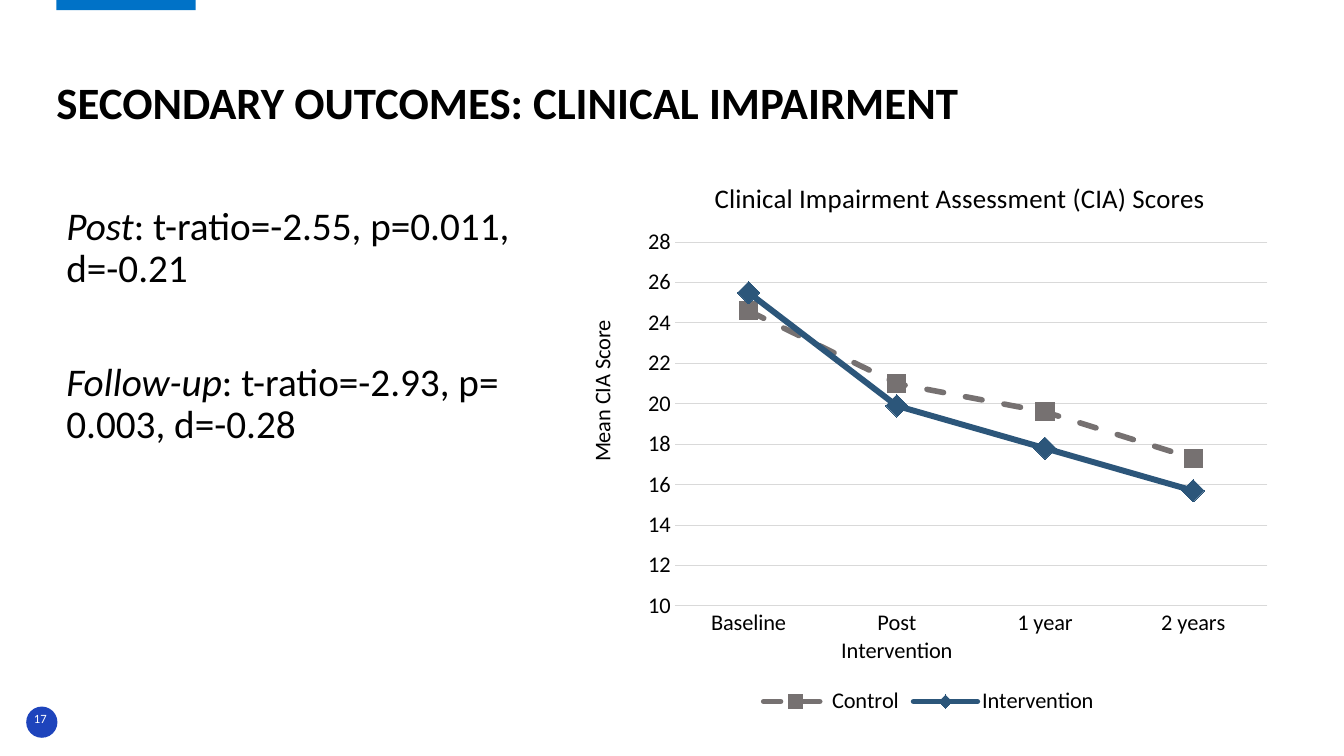
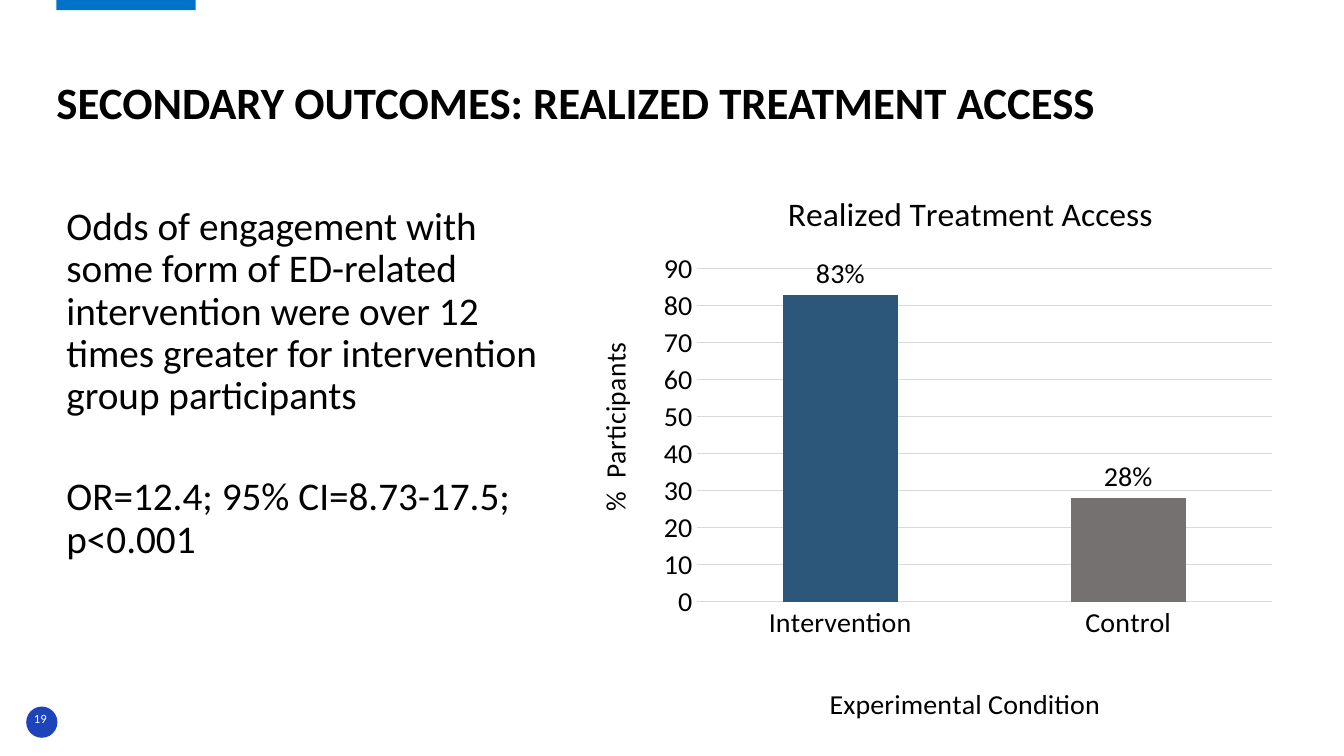
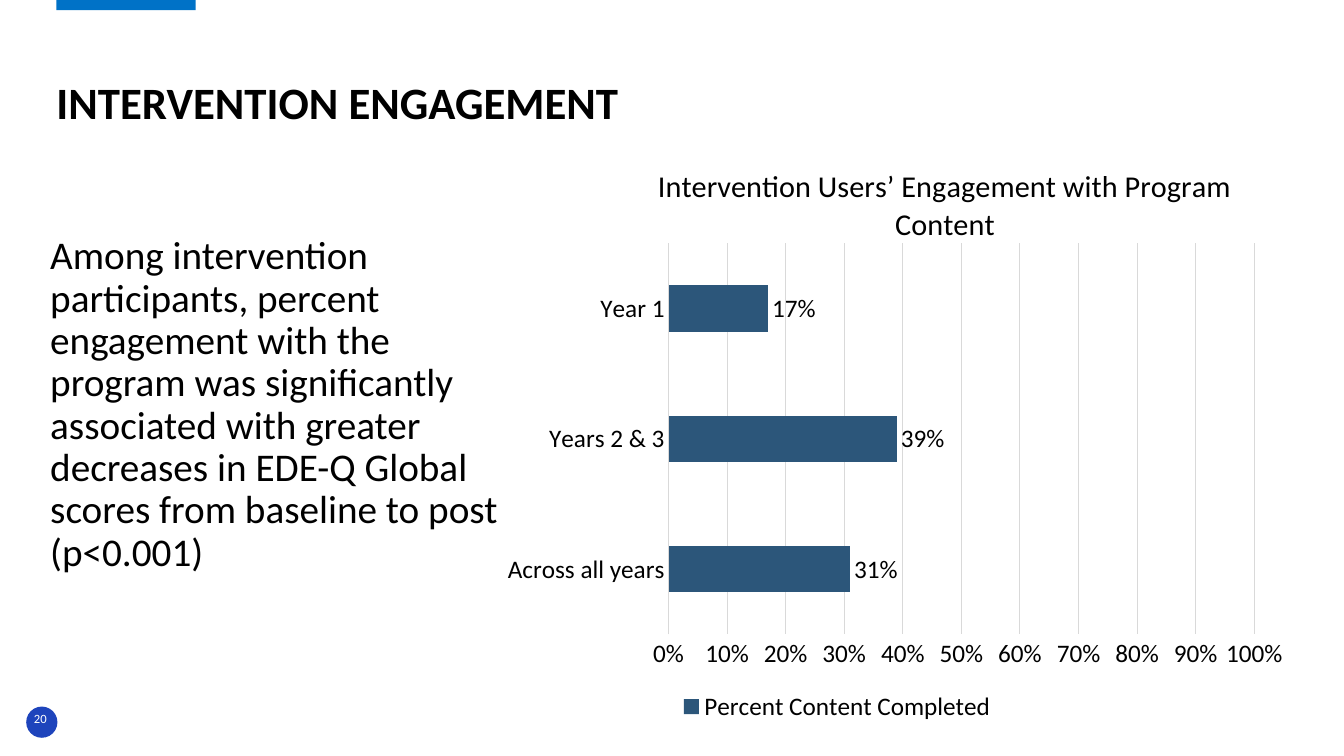
from dataclasses import dataclass

from lxml.etree import SubElement
from pptx import Presentation
from pptx.chart.data import CategoryChartData
from pptx.dml.color import RGBColor
from pptx.enum.chart import (XL_CHART_TYPE, XL_LABEL_POSITION,
                             XL_LEGEND_POSITION, XL_MARKER_STYLE,
                             XL_TICK_MARK)
from pptx.enum.dml import MSO_LINE
from pptx.enum.shapes import MSO_SHAPE
from pptx.enum.text import MSO_ANCHOR, PP_ALIGN
from pptx.oxml.ns import qn
from pptx.util import Inches, Pt

FONT = "Calibri"
BLACK = "000000"
WHITE = "FFFFFF"
BAND = "0072C7"
BADGE = "1E44BC"
NAVY = "2C567A"
GRAY = "767171"
GRID = "D9D9D9"

Box = tuple[float, float, float, float]
Point = tuple[float, float]


@dataclass
class Run:
    text: str
    italic: bool = False


@dataclass
class Series:
    name: str
    values: list[float]
    color: str


@dataclass
class Label:
    text: str
    spot: Point


@dataclass
class Graph:
    kind: XL_CHART_TYPE
    box: Box
    plot: Box
    size: int
    title: Label
    cats: list[str]
    series: list[Series]
    low: float
    high: float
    step: float
    style: str = "General"
    gap: int = 150
    x_name: Label | None = None
    y_name: Label | None = None
    legend: bool = False
    key: Box | None = None


@dataclass
class Page:
    number: str
    title: str
    box: Box
    body: list[list[Run]]
    graph: Graph
    space: int = 0


def color(code: str) -> RGBColor:
    return RGBColor.from_string(code)


def style(font, size: float, code: str = BLACK, bold: bool = False) -> None:
    font.name = FONT
    font.size = Pt(size)
    font.bold = bold
    font.color.rgb = color(code)


def inch(box: Box) -> list[int]:
    return [Inches(side) for side in box]


def add_fill(slide, kind: MSO_SHAPE, box: Box, code: str) -> None:
    shape = slide.shapes.add_shape(kind, *inch(box))
    shape.shadow.inherit = False
    shape.fill.solid()
    shape.fill.fore_color.rgb = color(code)
    shape.line.fill.background()


def add_frame(slide, box: Box, anchor: MSO_ANCHOR, inset: bool = False):
    frame = slide.shapes.add_textbox(*inch(box)).text_frame
    frame.word_wrap = True
    frame.vertical_anchor = anchor
    if not inset:
        frame.margin_left = frame.margin_right = 0
        frame.margin_top = frame.margin_bottom = 0
    return frame


def add_line(slide, box: Box, anchor: MSO_ANCHOR, text: str, size: int,
             code: str, bold: bool, align: PP_ALIGN) -> None:
    frame = add_frame(slide, box, anchor)
    frame.text = text
    part = frame.paragraphs[0]
    part.alignment = align
    part.line_spacing = 0.9
    style(part.runs[0].font, size, code, bold)


def add_body(slide, page: Page) -> None:
    frame = add_frame(slide, page.box, MSO_ANCHOR.TOP, inset=True)
    for index, runs in enumerate(page.body):
        part = frame.add_paragraph() if index else frame.paragraphs[0]
        part.line_spacing = 0.9
        if index:
            part.space_before = Pt(page.space)
        for item in runs:
            run = part.add_run()
            run.text = item.text
            style(run.font, 28)
            run.font.italic = item.italic


def place(node, index: int, spot: tuple[float, ...],
          inner: bool = False) -> None:
    for old in node.findall(qn("c:layout")):
        node.remove(old)
    layout = SubElement(node, qn("c:layout"))
    manual = SubElement(layout, qn("c:manualLayout"))
    if inner:
        SubElement(manual, qn("c:layoutTarget")).set("val", "inner")
    for side in "xy":
        SubElement(manual, qn(f"c:{side}Mode")).set("val", "edge")
    for side, value in zip("xywh", spot):
        SubElement(manual, qn(f"c:{side}")).set("val", str(value))
    node.insert(index, layout)


def set_title(title, label: Label, size: float) -> None:
    title.text_frame.text = label.text
    style(title.text_frame.paragraphs[0].runs[0].font, size)
    place(title.element, 1, label.spot)


def set_axes(chart, graph: Graph) -> None:
    pairs = ((chart.category_axis, graph.x_name),
             (chart.value_axis, graph.y_name))
    for axis, label in pairs:
        axis.major_tick_mark = axis.minor_tick_mark = XL_TICK_MARK.NONE
        style(axis.tick_labels.font, graph.size)
        axis.has_title = label is not None
        if label:
            set_title(axis.axis_title, label, graph.size)
    base, scale = chart.category_axis, chart.value_axis
    base.has_major_gridlines = False
    scale.has_major_gridlines = True
    for line in (base.format.line, scale.major_gridlines.format.line):
        line.color.rgb = color(GRID)
        line.width = Pt(0.75)
    scale.format.line.fill.background()
    scale.minimum_scale = graph.low
    scale.maximum_scale = graph.high
    scale.major_unit = graph.step
    if graph.style == "0%":
        scale.tick_labels.number_format = graph.style
        scale.tick_labels.number_format_is_linked = False


def set_lines(chart, graph: Graph) -> None:
    looks = ((4, MSO_LINE.DASH, XL_MARKER_STYLE.SQUARE, 13),
             (4.25, MSO_LINE.SOLID, XL_MARKER_STYLE.DIAMOND, 16))
    for series, data, look in zip(chart.plots[0].series, graph.series, looks):
        width, dash, mark, size = look
        series.smooth = False
        line = series.format.line
        line.color.rgb = color(data.color)
        line.width = Pt(width)
        line.dash_style = dash
        series.format.line._ln.set("cap", "rnd")
        series.marker.style = mark
        series.marker.size = size
        form = series.marker.format
        form.fill.solid()
        form.fill.fore_color.rgb = color(data.color)
        form.line.color.rgb = color(data.color)


def set_bars(chart, graph: Graph) -> None:
    plot = chart.plots[0]
    plot.gap_width = graph.gap
    plot.vary_by_categories = False
    plot.has_data_labels = True
    labels = plot.data_labels
    labels.show_value = True
    labels.number_format = graph.style
    labels.number_format_is_linked = False
    labels.position = XL_LABEL_POSITION.OUTSIDE_END
    style(labels.font, graph.size)
    for series, data in zip(plot.series, graph.series):
        series.invert_if_negative = False
        series.format.fill.solid()
        series.format.fill.fore_color.rgb = color(data.color)


def add_graph(slide, graph: Graph):
    data = CategoryChartData()
    data.categories = graph.cats
    for item in graph.series:
        data.add_series(item.name, item.values)
    chart = slide.shapes.add_chart(graph.kind, *inch(graph.box), data).chart
    style(chart.font, graph.size)
    chart.has_title = True
    set_title(chart.chart_title, graph.title, graph.size * 1.2)
    set_axes(chart, graph)
    if graph.kind == XL_CHART_TYPE.LINE_MARKERS:
        set_lines(chart, graph)
    else:
        set_bars(chart, graph)
    place(chart.element.find(".//" + qn("c:plotArea")), 0, graph.plot, True)
    chart.has_legend = graph.legend
    if graph.legend:
        chart.legend.position = XL_LEGEND_POSITION.BOTTOM
        chart.legend.include_in_layout = False
        style(chart.legend.font, graph.size)
        if graph.key:
            place(chart.element.find(".//" + qn("c:legend")), 1, graph.key)
    return chart


def add_page(deck, page: Page):
    slide = deck.slides.add_slide(deck.slide_layouts[6])
    add_fill(slide, MSO_SHAPE.RECTANGLE, (0.56, 0, 1.38, 0.1), BAND)
    add_fill(slide, MSO_SHAPE.OVAL, (0.26, 7.01, 0.31, 0.31), BADGE)
    add_line(slide, (0.24, 7.04, 0.32, 0.2), MSO_ANCHOR.MIDDLE,
             page.number, 9, WHITE, False, PP_ALIGN.CENTER)
    add_body(slide, page)
    add_line(slide, (0.56, 0.27, 12.19, 1.01), MSO_ANCHOR.BOTTOM,
             page.title, 32, BLACK, True, PP_ALIGN.LEFT)
    return add_graph(slide, page.graph)


LEFT = (0.56, 2, 5.15, 4.76)

SCORES = Page(
    "17", "SECONDARY OUTCOMES: CLINICAL IMPAIRMENT", LEFT,
    [[Run("Post", True), Run(": t-ratio=-2.55, p=0.011, d=-0.21")],
     [Run("Follow-up", True), Run(": t-ratio=-2.93, p= 0.003, d=-0.28")]],
    Graph(XL_CHART_TYPE.LINE_MARKERS, (5.71, 1.5, 7, 5.64),
          (0.14, 0.16, 0.84, 0.64), 16,
          Label("Clinical Impairment Assessment (CIA) Scores", (0.19, 0.04)),
          ["Baseline", "Post Intervention", "1 year", "2 years"],
          [Series("Control", [24.6, 21, 19.6, 17.3], GRAY),
           Series("Intervention", [25.5, 19.9, 17.8, 15.7], NAVY)],
          10, 28, 2, legend=True,
          y_name=Label("Mean CIA Score", (0.01, 0.29))),
    space=51)

ACCESS = Page(
    "19", "SECONDARY OUTCOMES: REALIZED TREATMENT ACCESS", LEFT,
    [[Run("Odds of engagement with some form of ED-related intervention "
          "were over 12 times greater for intervention group participants")],
     [Run("OR=12.4; 95% CI=8.73-17.5; p<0.001")]],
    Graph(XL_CHART_TYPE.COLUMN_CLUSTERED, (5.71, 1.62, 7.05, 5.62),
          (0.17, 0.19, 0.81, 0.6), 20,
          Label("Realized Treatment Access", (0.29, 0.04)),
          ["Intervention", "Control"],
          [Series("Series 1", [83, 28], NAVY)],
          0, 90, 10, style='0"%"',
          x_name=Label("Experimental Condition", (0.35, 0.93)),
          y_name=Label("%  Participants", (0.02, 0.32))),
    space=42)

USAGE = Page(
    "20", "INTERVENTION ENGAGEMENT", (0.4, 2.29, 4.96, 3.94),
    [[Run("Among intervention participants, percent engagement with the "
          "program was significantly associated with greater decreases in "
          "EDE-Q Global scores from baseline to post  (p<0.001)")]],
    Graph(XL_CHART_TYPE.BAR_CLUSTERED, (4.8, 1.28, 7.96, 5.97),
          (0.23, 0.19, 0.73, 0.65), 18,
          Label("Intervention Users’ Engagement with Program Content",
                (0.21, 0.05)),
          ["Across all years", "Years 2 & 3", "Year 1"],
          [Series("Percent Content Completed", [0.31, 0.39, 0.17], NAVY)],
          0, 1, 0.1, style="0%", gap=182, legend=True,
          key=(0.24, 0.93, 0.4, 0.06)))


def main() -> None:
    deck = Presentation()
    deck.slide_width = Inches(13.33)
    deck.slide_height = Inches(7.5)
    add_page(deck, SCORES)
    chart = add_page(deck, ACCESS)
    fill = chart.plots[0].series[0].points[1].format.fill
    fill.solid()
    fill.fore_color.rgb = color(GRAY)
    add_page(deck, USAGE)
    deck.save("out.pptx")


if __name__ == "__main__":
    main()
